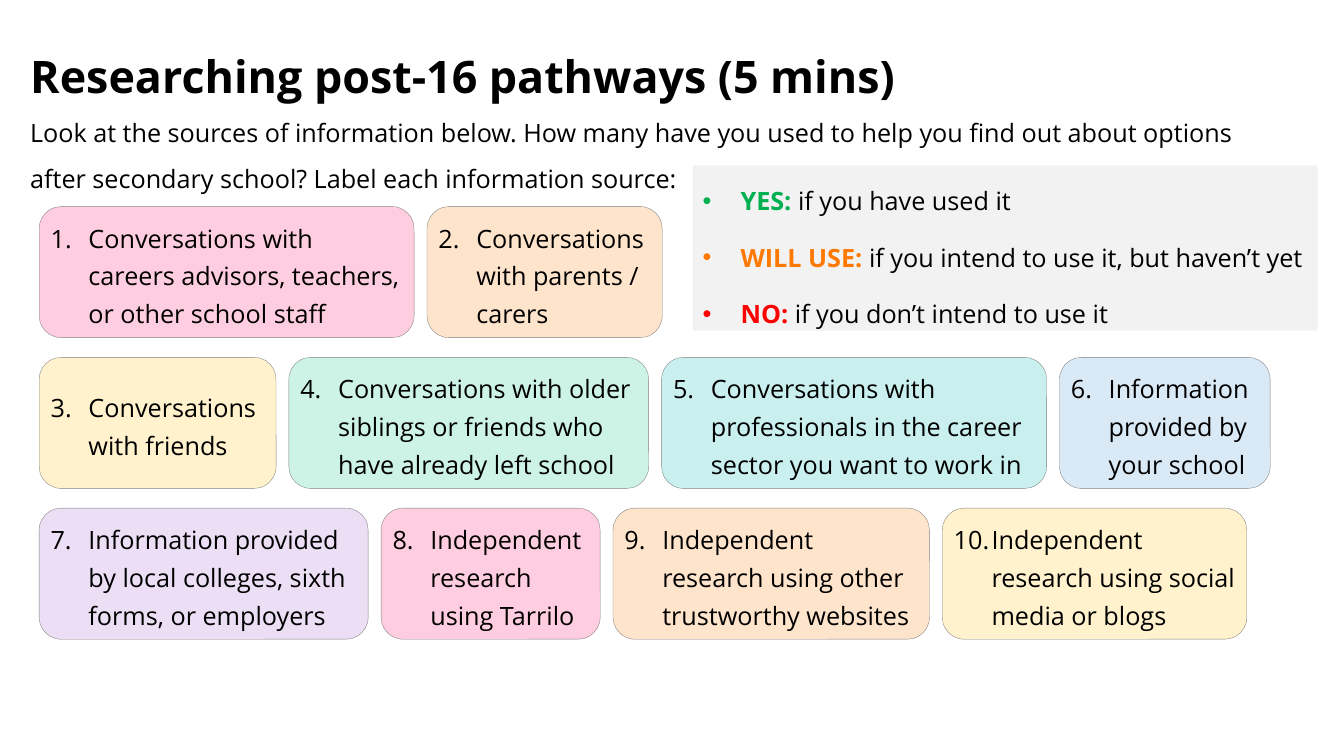
from dataclasses import dataclass

from lxml import etree
from pptx import Presentation
from pptx import util as u
from pptx.dml.color import RGBColor
from pptx.enum import shapes, text
from pptx.oxml.ns import qn


@dataclass(frozen=True)
class Theme:
    font: str = "Open Sans"
    title_size: float = 32
    body_size: float = 18
    ink: str = "000000"
    outline: str = "808080"
    panel: str = "F2F2F2"
    pink: str = "FFCDE0"
    peach: str = "FFE4CC"
    yellow: str = "FFF2CC"
    mint: str = "CDF3E6"
    aqua: str = "C9F0EF"
    blue: str = "DAE9F6"
    lilac: str = "ECDFF5"
    yes: str = "00B050"
    will_use: str = "FF7901"
    no: str = "FF0000"


@dataclass(frozen=True)
class Source:
    label: str
    width: float
    fill: str


@dataclass(frozen=True)
class Answer:
    word: str
    meaning: str
    colour: str


THEME = Theme()
LEFT, TOP, GAP, CARD_HEIGHT, ROW_PITCH = 28, 147.6, 9.2, 93.6, 107.7
HANGING = 27

SOURCE_ROWS = [
    [
        Source("Conversations with careers advisors, teachers, or other school staff", 267.8, THEME.pink),
        Source("Conversations with parents / carers", 168, THEME.peach),
    ],
    [
        Source("Conversations with friends", 169.2, THEME.yellow),
        Source("Conversations with older siblings or friends who have already left school", 257, THEME.mint),
        Source("Conversations with professionals in the career sector you want to work in", 275, THEME.aqua),
        Source("Information provided by your school", 150.5, THEME.blue),
    ],
    [
        Source("Information provided by local colleges, sixth forms, or employers", 235, THEME.lilac),
        Source("Independent research using Tarrilo", 156.5, THEME.pink),
        Source("Independent research using other trustworthy websites", 226, THEME.peach),
        Source("Independent research using social media or blogs", 217.5, THEME.yellow),
    ],
]

ANSWERS = [
    Answer("YES: ", "if you have used it", THEME.yes),
    Answer("WILL USE: ", "if you intend to use it, but haven’t yet", THEME.will_use),
    Answer("NO: ", "if you don’t intend to use it", THEME.no),
]


def write(paragraph, words: str, *, size: float = THEME.body_size, colour: str = THEME.ink,
          bold: bool = False, spacing: float = 1.5, after: float = 8) -> None:
    paragraph.alignment = text.PP_ALIGN.LEFT
    paragraph.line_spacing = spacing
    paragraph.space_after = u.Pt(after)
    run = paragraph.add_run()
    run.text = words
    run.font.name = THEME.font
    run.font.size = u.Pt(size)
    run.font.bold = bold
    run.font.color.rgb = RGBColor.from_string(colour)


def add_marker(paragraph, tag: str, **attributes: str) -> None:
    properties = paragraph._p.get_or_add_pPr()
    properties.set("marL", str(u.Pt(HANGING)))
    properties.set("indent", str(-u.Pt(HANGING)))
    typeface = "Arial" if tag == "a:buChar" else "+mj-lt"
    etree.SubElement(properties, qn("a:buFont"), typeface=typeface)
    etree.SubElement(properties, qn(tag), **attributes)


def add_panel(slide, kind, left: float, top: float, width: float, height: float, fill: str):
    panel = slide.shapes.add_shape(kind, u.Pt(left), u.Pt(top), u.Pt(width), u.Pt(height))
    panel.shadow.inherit = False
    panel.fill.solid()
    panel.fill.fore_color.rgb = RGBColor.from_string(fill)
    panel.line.fill.background()
    panel.text_frame.word_wrap = True
    return panel


def add_source(slide, source: Source, number: int, left: float, top: float) -> None:
    card = add_panel(slide, shapes.MSO_SHAPE.ROUNDED_RECTANGLE, left, top,
                     source.width, CARD_HEIGHT, source.fill)
    card.line.color.rgb = RGBColor.from_string(THEME.outline)
    card.line.width = u.Pt(0.25)
    frame = card.text_frame
    frame.vertical_anchor = text.MSO_ANCHOR.MIDDLE
    frame.margin_left = frame.margin_right = u.Pt(3.6)
    frame.margin_top = frame.margin_bottom = u.Pt(3.6)
    add_marker(frame.paragraphs[0], "a:buAutoNum", type="arabicPeriod", startAt=str(number))
    write(frame.paragraphs[0], source.label, spacing=1.25, after=30)


def add_sources(slide) -> None:
    number = 1
    for row, sources in enumerate(SOURCE_ROWS):
        left = LEFT
        for source in sources:
            add_source(slide, source, number, left, TOP + row * ROW_PITCH)
            left += source.width + GAP
            number += 1


def add_answers(slide) -> None:
    key = add_panel(slide, shapes.MSO_SHAPE.RECTANGLE, 494.9, 118.2, 446.4, 118, THEME.panel)
    frame = key.text_frame
    frame.vertical_anchor = text.MSO_ANCHOR.TOP
    frame.auto_size = text.MSO_AUTO_SIZE.SHAPE_TO_FIT_TEXT
    for index, answer in enumerate(ANSWERS):
        paragraph = frame.add_paragraph() if index else frame.paragraphs[0]
        add_marker(paragraph, "a:buChar", char="•")
        write(paragraph, answer.word, colour=answer.colour, bold=True)
        write(paragraph, answer.meaning)


def add_heading(slide) -> None:
    title = slide.shapes.title
    title.left, title.top, title.width, title.height = map(u.Pt, (14.4, 26.6, 899.3, 52.6))
    title.text_frame.vertical_anchor = text.MSO_ANCHOR.MIDDLE
    title.text_frame.auto_size = text.MSO_AUTO_SIZE.NONE
    write(title.text_frame.paragraphs[0], "Researching post-16 pathways (5 mins)",
          size=THEME.title_size, bold=True, spacing=1.07)

    task = slide.shapes.add_textbox(*map(u.Pt, (14.4, 69.8, 913.7, 154)))
    task.text_frame.word_wrap = True
    task.text_frame.auto_size = text.MSO_AUTO_SIZE.SHAPE_TO_FIT_TEXT
    write(task.text_frame.paragraphs[0],
          "Look at the sources of information below. How many have you used to help you "
          "find out about options after secondary school? Label each information source:")


def main() -> None:
    deck = Presentation()
    deck.slide_width, deck.slide_height = u.Pt(960), u.Pt(540)
    slide = deck.slides.add_slide(deck.slide_layouts[5])
    add_heading(slide)
    add_sources(slide)
    add_answers(slide)
    deck.save("out.pptx")


if __name__ == "__main__":
    main()
